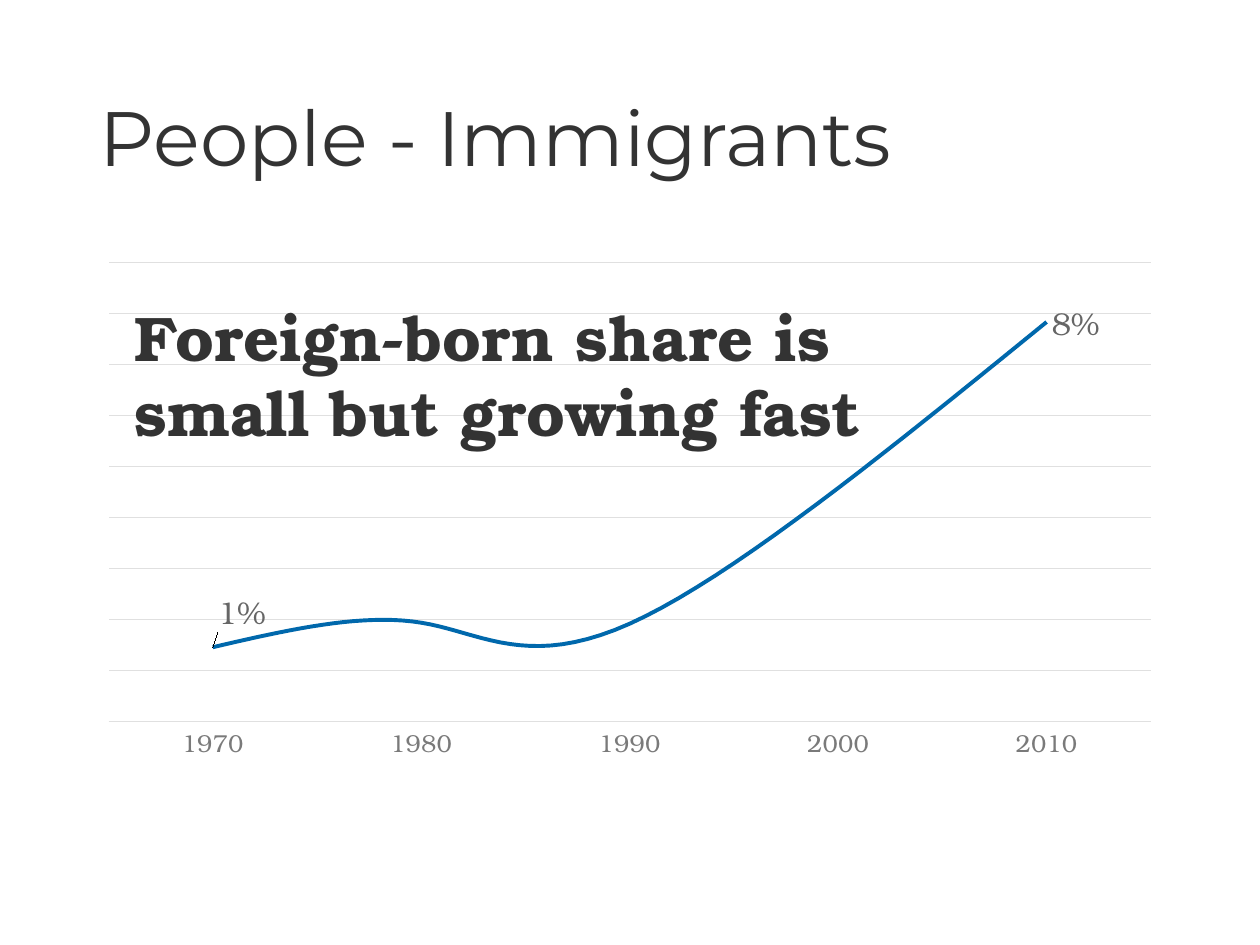
from dataclasses import dataclass

from lxml import etree
from pptx import Presentation
from pptx import util as u
from pptx.chart import data as chart_data
from pptx.dml.color import RGBColor
from pptx.enum import chart as charts, text
from pptx.oxml import ns

HEADING_FONT, BODY_FONT = "Montserrat", "TeX Gyre Bonum"
DARK, GREY, LABEL_GREY, RULE, BLUE = "333333", "7A7A7A", "666666", "E0E0E0", "0068AC"
LEFT, WIDTH = u.Cm(1.75), u.Cm(21.89)

SHARES = {"1970": 0.0146, "1980": 0.0194, "1990": 0.0192, "2000": None, "2010": 0.0783}


@dataclass
class Style:
    font: str
    size: float
    color: str
    bold: bool = False


@dataclass
class PointLabel:
    index: int
    rise: float = 0  # upward shift as a share of the chart height


POINT_LABELS = [PointLabel(0, rise=0.07), PointLabel(4)]


def rgb(color: str) -> RGBColor:
    return RGBColor.from_string(color)


def style_font(font, style: Style) -> None:
    font.name, font.size, font.bold = style.font, u.Pt(style.size), style.bold
    font.color.rgb = rgb(style.color)


def style_line(line, color: str, width: float) -> None:
    line.color.rgb = rgb(color)
    line.width = u.Pt(width)


def fill_text(box, words: str, style: Style) -> None:
    box.text_frame.word_wrap = True
    para = box.text_frame.paragraphs[0]
    para.text = words
    para.alignment = text.PP_ALIGN.LEFT
    for span in para.runs:
        style_font(span.font, style)


def manual_layout(**values) -> etree._Element:
    layout = etree.Element(ns.qn("c:layout"))
    manual = etree.SubElement(layout, ns.qn("c:manualLayout"))
    for name, value in values.items():
        etree.SubElement(manual, ns.qn(f"c:{name}"), val=str(value))
    return layout


def add_point_label(series, label: PointLabel) -> None:
    data_label = series.points[label.index].data_label
    style_font(data_label.font, Style(BODY_FONT, 18, LABEL_GREY))
    data_label.position = charts.XL_LABEL_POSITION.RIGHT
    if label.rise:
        index = series._element.xpath(f"c:dLbls/c:dLbl/c:idx[@val='{label.index}']")[0]
        index.addnext(manual_layout(x=0, y=-label.rise))


def add_share_chart(page) -> None:
    data = chart_data.CategoryChartData(number_format="0%")
    data.categories = list(SHARES)
    data.add_series("Series 1", list(SHARES.values()))
    chart = page.shapes.add_chart(
        charts.XL_CHART_TYPE.LINE, LEFT, u.Cm(5.08), WIDTH, u.Cm(10.41), data).chart
    chart.has_legend = chart.has_title = False
    style_font(chart.font, Style(BODY_FONT, 10, DARK))

    # Axes
    years = chart.category_axis
    years.major_tick_mark = charts.XL_TICK_MARK.NONE
    style_font(years.tick_labels.font, Style(BODY_FONT, 14, GREY))
    style_line(years.format.line, RULE, 0.75)
    scale = chart.value_axis
    scale.minimum_scale, scale.maximum_scale, scale.major_unit = 0, 0.09, 0.01
    scale.tick_labels.number_format = "0%"
    scale.tick_labels.number_format_is_linked = False
    style_line(scale.major_gridlines.format.line, RULE, 0.75)
    scale.visible = False

    # Line and its end labels
    plot = chart.plots[0]
    plot.vary_by_categories = False
    series = plot.series[0]
    series.smooth = True
    series.marker.style = charts.XL_MARKER_STYLE.NONE
    style_line(series.format.line, BLUE, 2.25)
    series.data_labels.show_value = False
    for label in POINT_LABELS:
        add_point_label(series, label)

    # Plot area position, and a line that spans the missing year
    root = chart._chartSpace
    area = root.find(".//" + ns.qn("c:plotArea"))
    for old in area.findall(ns.qn("c:layout")):
        area.remove(old)
    area.insert(0, manual_layout(layoutTarget="inner", xMode="edge", yMode="edge",
                                 x=0.02, y=0.02, w=0.96, h=0.89))
    root.find(".//" + ns.qn("c:dispBlanksAs")).set("val", "span")


def main() -> None:
    deck = Presentation()
    deck.slide_width, deck.slide_height = u.Cm(25.4), u.Cm(19.05)
    page = deck.slides.add_slide(deck.slide_layouts[5])

    # Title
    title = page.shapes.title
    title.left, title.top, title.width, title.height = LEFT, u.Cm(1.02), WIDTH, u.Cm(3.68)
    title.text_frame.vertical_anchor = text.MSO_ANCHOR.MIDDLE
    fill_text(title, "People - Immigrants", Style(HEADING_FONT, 44, DARK))
    title.text_frame.paragraphs[0].line_spacing = 0.9

    # Chart
    add_share_chart(page)

    # Message over the chart
    message = page.shapes.add_textbox(u.Cm(2.46), u.Cm(5.89), u.Cm(16.56), u.Cm(3.33))
    message.text_frame.auto_size = text.MSO_AUTO_SIZE.SHAPE_TO_FIT_TEXT
    fill_text(message, "Foreign-born share is small but growing fast",
              Style(BODY_FONT, 36, DARK, bold=True))

    deck.save("out.pptx")


if __name__ == "__main__":
    main()
